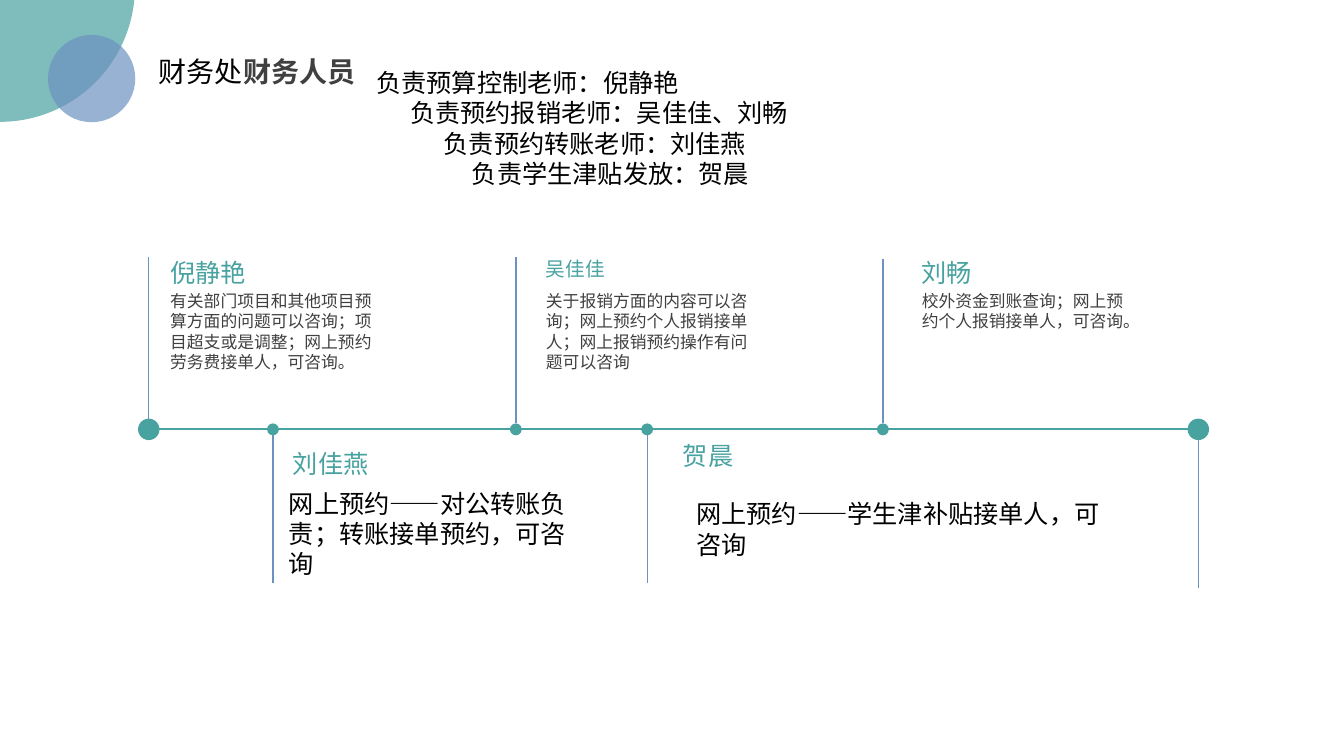
"""Build the finance office staff slide with its contact timeline."""
from lxml import etree
from pptx import Presentation
from pptx.dml.color import RGBColor
from pptx.enum.shapes import MSO_CONNECTOR, MSO_SHAPE
from pptx.enum.text import MSO_ANCHOR, MSO_AUTO_SIZE, PP_ALIGN
from pptx.oxml.ns import qn
from pptx.util import Cm, Pt

OVAL, STRAIGHT = MSO_SHAPE.OVAL, MSO_CONNECTOR.STRAIGHT
TOP, LEFT = MSO_ANCHOR.TOP, PP_ALIGN.LEFT
GROW = MSO_AUTO_SIZE.SHAPE_TO_FIT_TEXT
TEAL = RGBColor(0x48, 0xA2, 0xA0)
BLUE = RGBColor(0x6C, 0x92, 0xC0)
GRAY = RGBColor(0x40, 0x40, 0x40)
BLACK = RGBColor(0, 0, 0)
FONT = "Noto Sans CJK SC"

HEADING = {"size": Pt(18), "color": TEAL}
SMALL_HEADING = {"size": Pt(14), "color": TEAL}
DETAIL = {"size": Pt(12), "color": GRAY}
LARGE = {"size": Pt(18), "color": BLACK}
TITLE = {"size": Pt(20), "color": BLACK, "bold": False}
TITLE_STRONG = {"size": Pt(20), "color": GRAY, "bold": True}

AXIS_Y = 10.82
MILESTONES = [
    (3.75, 0.27, 6.48),
    (6.88, 0.15, 14.7),
    (13, 0.15, 6.48),
    (16.31, 0.15, 14.68),
    (22.25, 0.15, 6.53),
    (30.2, 0.27, 14.81),
]
CONTACTS = [
    ("倪静艳", HEADING, (4.04, 6.35, 6.1, 1.03),
     "有关部门项目和其他项目预算方面的问题可以咨询；项目超支或是调整；网上预约劳务费接单人，可咨询。",
     DETAIL, (4.04, 7.21, 5.87, 2.31)),
    ("吴佳佳", SMALL_HEADING, (13.51, 6.35, 6.9, 0.86),
     "关于报销方面的内容可以咨询；网上预约个人报销接单人；网上报销预约操作有问题可以咨询",
     DETAIL, (13.51, 7.21, 5.87, 2.31)),
    ("刘畅", HEADING, (22.98, 6.35, 6.2, 1.03),
     "校外资金到账查询；网上预约个人报销接单人，可咨询。",
     DETAIL, (22.98, 7.21, 5.87, 1.28)),
    ("刘佳燕", HEADING, (7.13, 11.18, 6.63, 1.03),
     "网上预约——对公转账负责；转账接单预约，可咨询",
     LARGE, (7.03, 12.17, 7.7, 2.56)),
    ("贺晨", HEADING, (16.96, 10.98, 6.63, 1.03),
     "网上预约——学生津补贴接单人，可咨询",
     LARGE, (17.3, 12.44, 10.92, 1.79)),
]
DUTIES = [
    ("负责预算控制老师：倪静艳", 0),
    ("负责预约报销老师：吴佳佳、刘畅", 0.85),
    ("负责预约转账老师：刘佳燕", 1.7),
    ("负责学生津贴发放：贺晨", 2.41),
]


class StaffSlide:
    """Hold the font and the current slide, and draw its elements."""

    def __init__(self, slide, font):
        self.slide = slide
        self.shapes = slide.shapes
        self.font = font

    def run(self, paragraph, text, style):
        run = paragraph.add_run()
        run.text = text
        for name, value in {**style, "name": self.font}.items():
            if name == "color":
                run.font.color.rgb = value
            else:
                setattr(run.font, name, value)
        east_asian = etree.SubElement(run.font._element, qn("a:ea"))
        east_asian.set("typeface", self.font)

    def frame(self, holder, box, wrap=True):
        holder.left, holder.top, holder.width, holder.height = map(Cm, box)
        frame = holder.text_frame
        settings = {"word_wrap": wrap, "auto_size": GROW, "vertical_anchor": TOP}
        for name, value in settings.items():
            setattr(frame, name, value)
        return frame

    def title(self, parts, box):
        paragraph = self.frame(self.shapes.title, box, wrap=False).paragraphs[0]
        paragraph.alignment = LEFT
        for text, style in parts:
            self.run(paragraph, text, style)

    def duties(self, lines, style, box):
        frame = self.frame(self.slide.placeholders[1], box)
        for index, (text, indent) in enumerate(lines):
            paragraph = frame.add_paragraph() if index else frame.paragraphs[0]
            properties = paragraph._p.get_or_add_pPr()
            properties.set("marL", str(Cm(indent)))
            properties.set("indent", "0")
            etree.SubElement(properties, qn("a:buNone"))
            paragraph.space_before = Pt(0)
            self.run(paragraph, text, style)

    def label(self, text, style, box):
        holder = self.shapes.add_textbox(*map(Cm, box))
        self.run(self.frame(holder, box).paragraphs[0], text, style)

    def circle(self, x, y, radius, color, opacity=100):
        circle = self.shapes.add_shape(
            OVAL, Cm(x - radius), Cm(y - radius), Cm(2 * radius), Cm(2 * radius))
        circle.shadow.inherit = False
        circle.fill.solid()
        circle.fill.fore_color.rgb = color
        circle.line.fill.background()
        if opacity < 100:
            fill_color = circle._element.spPr.find(qn("a:solidFill"))[0]
            alpha = etree.SubElement(fill_color, qn("a:alpha"))
            alpha.set("val", str(opacity * 1000))

    def line(self, start, end, color, width):
        line = self.shapes.add_connector(STRAIGHT, *map(Cm, (*start, *end)))
        line.line.color.rgb = color
        line.line.width = Pt(width)
        etree.SubElement(line._element.spPr, qn("a:effectLst"))


def main():
    deck = Presentation()
    deck.slide_width, deck.slide_height = Cm(33.87), Cm(19.05)
    staff = StaffSlide(deck.slides.add_slide(deck.slide_layouts[1]), FONT)

    staff.circle(0, -0.33, 3.4, TEAL, 70)
    staff.circle(2.31, 1.98, 1.1, BLUE, 70)
    staff.title([("财务处", TITLE), ("财务人员", TITLE_STRONG)], (3.75, 1.24, 5.5, 1.12))
    staff.duties(DUTIES, LARGE, (9.23, 1.57, 16.94, 3.33))

    staff.line((MILESTONES[0][0], AXIS_Y), (MILESTONES[-1][0], AXIS_Y), TEAL, 1.5)
    for x, radius, stem_end in MILESTONES:
        edge = AXIS_Y + (radius if stem_end > AXIS_Y else -radius)
        staff.line((x, edge), (x, stem_end), BLUE, 1)
        staff.circle(x, AXIS_Y, radius, TEAL)

    for name, name_style, name_box, detail, detail_style, detail_box in CONTACTS:
        staff.label(name, name_style, name_box)
        staff.label(detail, detail_style, detail_box)

    deck.save("out.pptx")


if __name__ == "__main__":
    main()
